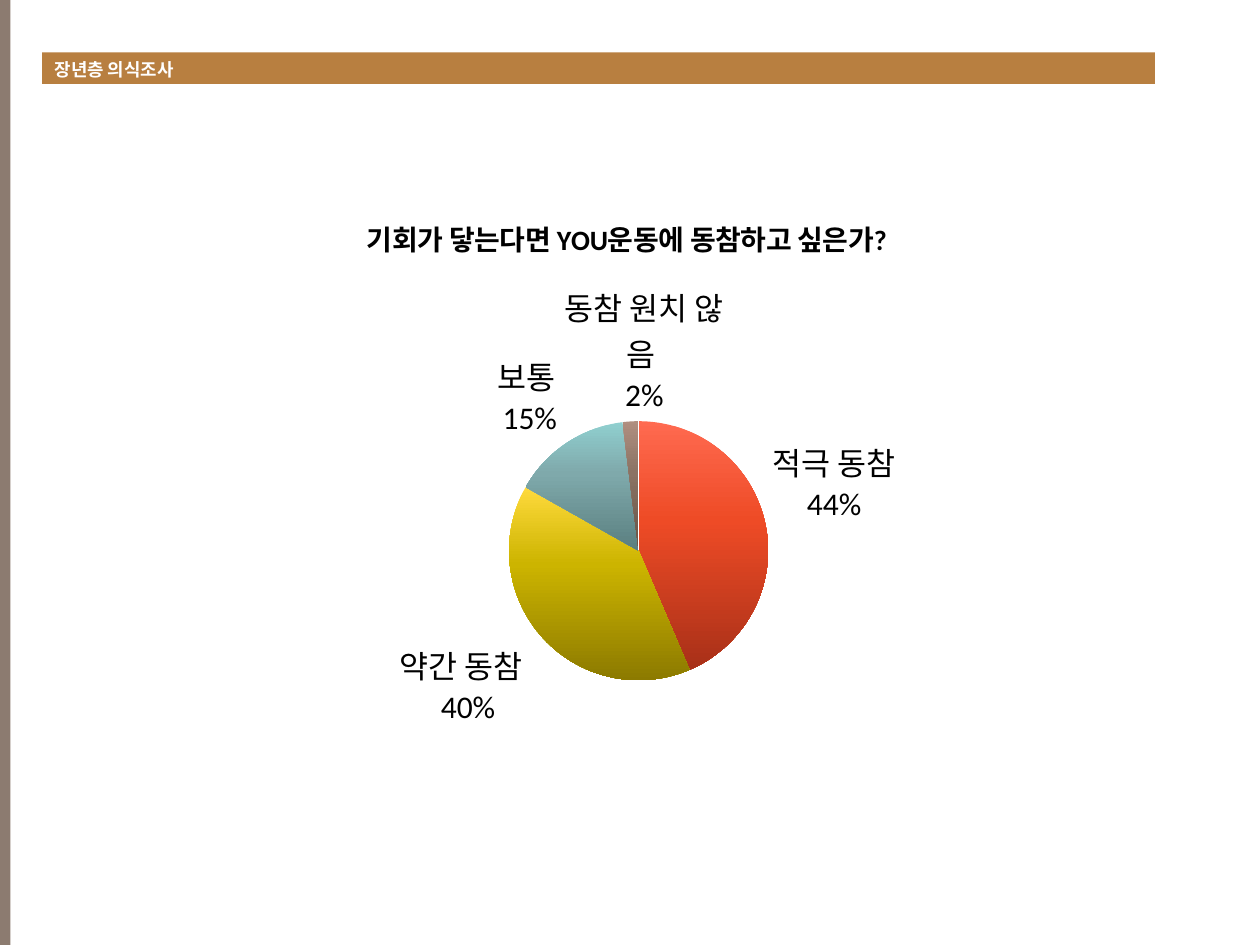
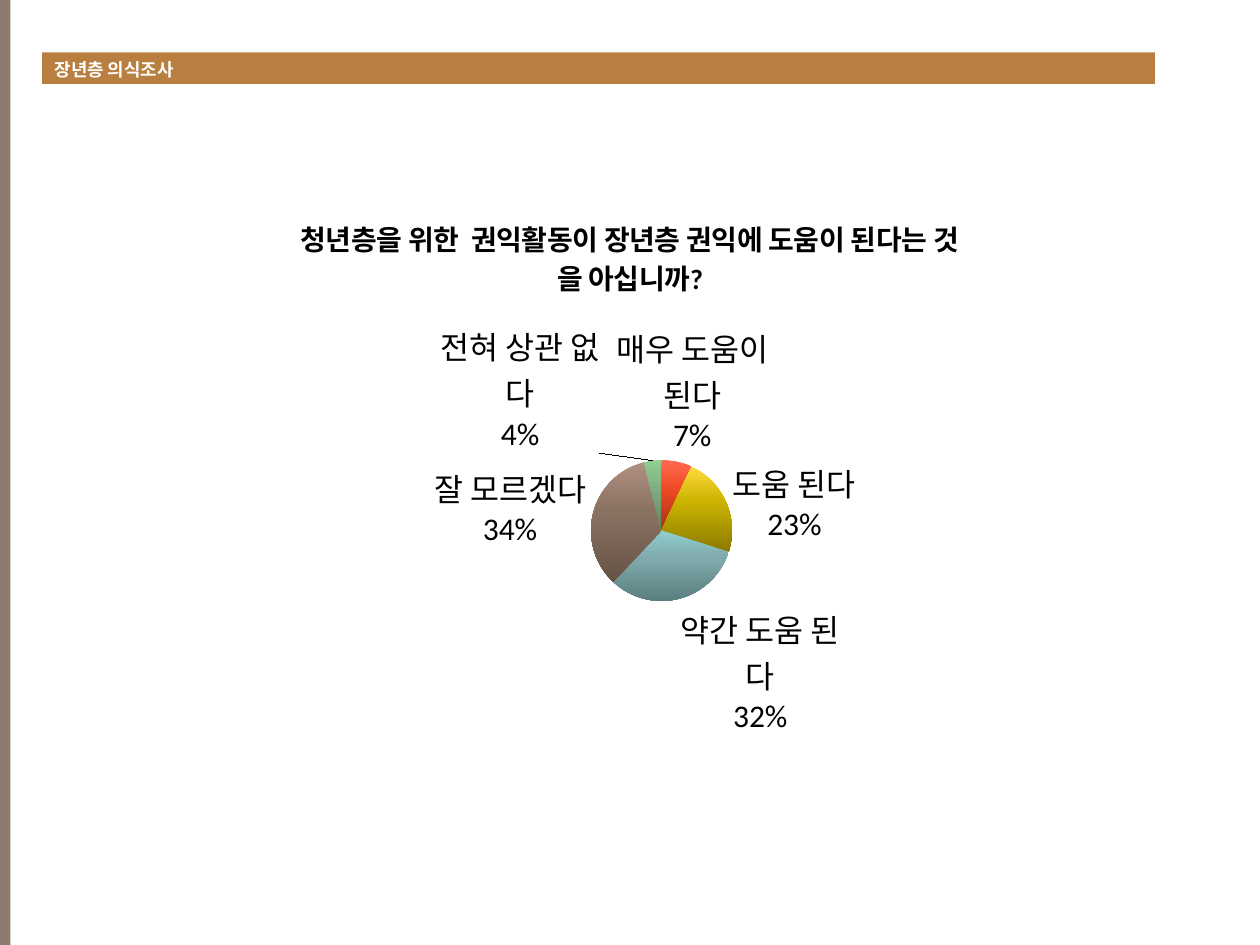
from copy import deepcopy

from lxml import etree
from pptx import Presentation
from pptx import util as u
from pptx.chart.data import CategoryChartData
from pptx.dml.color import RGBColor
from pptx.enum import chart as ch, shapes, text
from pptx.oxml.ns import qn

Pt = u.Pt
FONT = "Calibri"
STRIPE, BAND, WHITE, BLACK = "8C7B70", "B87F40", "FFFFFF", "000000"
HEADING = "장년층 의식조사"

# Top, middle and bottom colour of each slice
SLICES = [
    ("FF6A50", "EE4B26", "A83018"),
    ("FFDA3C", "CCB400", "8C7A00"),
    ("90CFCF", "7FA9AB", "5A7F80"),
    ("B08F80", "8B7364", "665345"),
    ("90CF8E", "7FAF80", "5E8060"),
]
STOPS = (0, 0.4, 1)

SURVEYS = [
    ("기회가 닿는다면 YOU운동에 동참하고 싶은가? ",
     {"적극 동참": 44, "약간 동참  ": 40, "보통 ": 15, "동참 원치 않음 ": 2}),
    ("청년층을 위한  권익활동이 장년층 권익에 도움이 된다는 것을 아십니까?",
     {"매우 도움이 된다": 7, "도움 된다": 23, "약간 도움 된다": 32,
      "잘 모르겠다": 34, "전혀 상관 없다": 4}),
]


def rgb(value):
    return RGBColor.from_string(value)


def set_attrs(obj, values):
    for name, value in values.items():
        setattr(obj, name, value)


def set_font(font, size, color, bold=False):
    set_attrs(font, {"name": FONT, "size": Pt(size), "bold": bold})
    font.color.rgb = rgb(color)


def fill_solid(sp, color):
    sp.fill.solid()
    sp.fill.fore_color.rgb = rgb(color)


def add_stripe(slide, height):
    sp = slide.shapes.add_shape(shapes.MSO_SHAPE.RECTANGLE, 0, 0, Pt(6), height)
    sp.shadow.inherit = False
    sp.line.fill.background()
    fill_solid(sp, STRIPE)


def add_heading(slide, heading):
    """Turn the title placeholder into the coloured heading band."""
    sp = slide.shapes.title
    set_attrs(sp, {"left": Pt(24), "top": Pt(30), "width": Pt(636), "height": Pt(18)})
    fill_solid(sp, BAND)
    tf = sp.text_frame
    set_attrs(tf, {"text": heading, "word_wrap": True,
                   "auto_size": text.MSO_AUTO_SIZE.NONE,
                   "vertical_anchor": text.MSO_ANCHOR.MIDDLE,
                   "margin_left": Pt(7.2), "margin_top": Pt(1), "margin_bottom": 0})
    p = tf.paragraphs[0]
    p.alignment = text.PP_ALIGN.LEFT
    set_font(p.runs[0].font, 10.2, WHITE, bold=True)


def shade_slice(point, colors):
    """Fill a slice with a three-stop gradient from top to bottom."""
    fill = point.format.fill
    fill.gradient()
    fill.gradient_angle = 270
    stop_list = next(fill.gradient_stops[0]._gs.iterancestors(qn("a:gsLst")))
    stop_list.insert(1, deepcopy(stop_list[0]))
    for stop, position, color in zip(fill.gradient_stops, STOPS, colors):
        stop.position = position
        stop.color.rgb = rgb(color)


def format_labels(plot):
    plot.has_data_labels = True
    labels = plot.data_labels
    set_attrs(labels, {"show_category_name": True, "show_percentage": True,
                       "show_value": False, "number_format": "0%",
                       "number_format_is_linked": False,
                       "position": ch.XL_LABEL_POSITION.BEST_FIT})
    set_font(labels.font, 18, BLACK)
    separator = etree.Element(qn("c:separator"))
    separator.text = "\n"
    labels._element.find(qn("c:showBubbleSize")).addnext(separator)


def add_pie(slide, question, answers):
    data = CategoryChartData()
    data.categories = list(answers)
    data.add_series(question, list(answers.values()))
    chart = slide.shapes.add_chart(ch.XL_CHART_TYPE.PIE, Pt(120), Pt(110),
                                   Pt(480), Pt(320), data).chart
    set_font(chart.font, 18, BLACK)
    chart.has_legend = False
    tf = chart.chart_title.text_frame
    tf.text = question
    set_font(tf.paragraphs[0].runs[0].font, 16, BLACK, bold=True)
    chart.chart_title.include_in_layout = False
    plot = chart.plots[0]
    plot.vary_by_categories = True
    format_labels(plot)
    points = plot.series[0].points
    for i, colors in enumerate(SLICES[:len(answers)]):
        shade_slice(points[i], colors)


def main():
    prs = Presentation()
    set_attrs(prs, {"slide_width": Pt(720), "slide_height": Pt(540)})
    title_only = prs.slide_layouts[5]
    for question, answers in SURVEYS:
        slide = prs.slides.add_slide(title_only)
        add_stripe(slide, prs.slide_height)
        add_heading(slide, HEADING)
        add_pie(slide, question, answers)
    prs.save("out.pptx")


if __name__ == "__main__":
    main()
